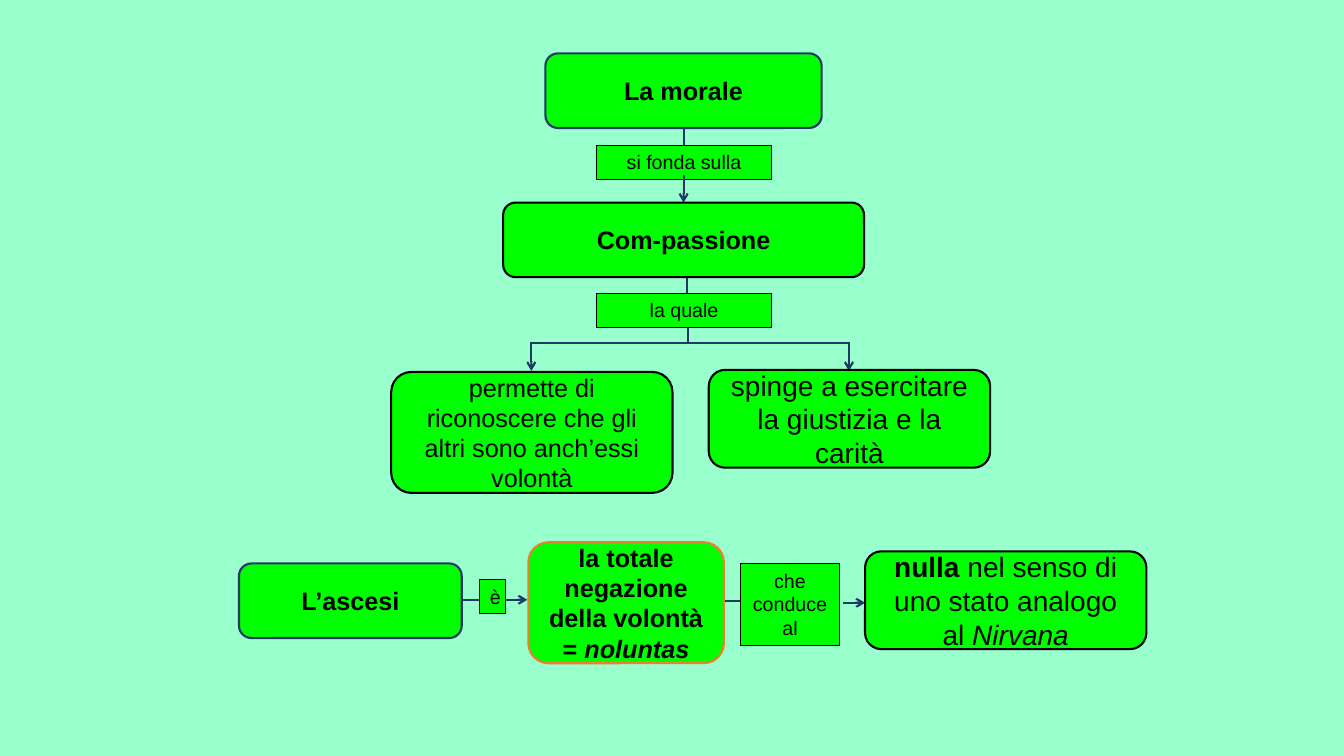
from lxml import etree
from pptx import Presentation
from pptx.dml.color import RGBColor
from pptx.enum import shapes, text
from pptx.oxml.ns import qn
from pptx.util import Inches, Pt

COLORS = {
    "background": "99FFCC",
    "box": "00FF00",
    "black": "000000",
    "navy": "203864",
    "orange": "ED7D31",
}
FONT = "Arial"

# start x, start y, end x, end y
LINES = [
    (5.27, 3.4, 8.42, 3.4),
    (6.82, 3.21, 6.82, 3.4),
    (6.78, 1.26, 6.78, 1.44),
    (6.81, 2.75, 6.81, 2.93),
    (4.59, 5.95, 4.76, 5.95),
    (7.19, 5.96, 7.36, 5.96),
]
ARROWS = [
    (6.78, 1.74, 6.78, 2.01),
    (5.27, 3.39, 5.27, 3.68),
    (8.42, 3.39, 8.42, 3.68),
    (5.02, 5.95, 5.23, 5.95),
    (8.36, 5.98, 8.58, 5.98),
]

# left, top, width, height, wording
LABELS = [
    (5.92, 1.44, 1.73, 0.34, "si fonda sulla"),
    (5.92, 2.91, 1.73, 0.34, "la quale"),
    (4.76, 5.75, 0.25, 0.34, "è"),
    (7.34, 5.59, 0.99, 0.81, "che conduce al"),
]

# left, top, width, height, outline, text size, paragraphs of (wording, style)
CONCEPTS = [
    (5.41, 0.53, 2.74, 0.74, "navy", 18, [[("La morale", "b")]]),
    (4.99, 2.01, 3.58, 0.74, "black", 18, [[("Com-passione", "b")]]),
    (3.88, 3.69, 2.79, 1.2, "black", 18,
     [[("permette di riconoscere che gli altri sono anch’essi volontà", "")]]),
    (7.03, 3.67, 2.79, 0.97, "black", 20,
     [[("spinge a esercitare la giustizia e la carità", "")]]),
    (2.37, 5.59, 2.21, 0.74, "navy", 18, [[("L’ascesi", "b")]]),
    (5.24, 5.38, 1.94, 1.2, "orange", 18,
     [[("la totale negazione", "b")],
      [("della volontà = ", "b"), ("noluntas", "bi")]]),
    (8.58, 5.47, 2.79, 0.97, "black", 20,
     [[("nulla", "b"), (" nel senso di uno stato analogo al ", ""),
       ("Nirvana", "i")]]),
]


def rgb(name):
    return RGBColor.from_string(COLORS[name])


def add_link(slide, ends, arrow=False):
    x1, y1, x2, y2 = map(Inches, ends)
    link = slide.shapes.add_connector(
        shapes.MSO_CONNECTOR.STRAIGHT, x1, y1, x2, y2)
    link.line.color.rgb = rgb("navy")
    link.line.width = Pt(1.5)
    if arrow:
        etree.SubElement(link.line._get_or_add_ln(), qn("a:tailEnd"), type="arrow")
    etree.SubElement(link._element.spPr, qn("a:effectLst"))


def write(tf, paragraphs, size):
    """Fill a text frame; style letters are b for bold and i for italic."""
    tf.word_wrap = True
    for i, runs in enumerate(paragraphs):
        p = tf.paragraphs[0] if i == 0 else tf.add_paragraph()
        p.alignment = text.PP_ALIGN.CENTER
        for wording, style in runs:
            r = p.add_run()
            r.text = wording
            r.font.name = FONT
            r.font.size = Pt(size)
            r.font.bold = "b" in style
            r.font.italic = "i" in style
            r.font.color.rgb = rgb("black")


def paint(sp, outline, width):
    sp.fill.solid()
    sp.fill.fore_color.rgb = rgb("box")
    sp.line.color.rgb = rgb(outline)
    sp.line.width = Pt(width)


def add_label(slide, left, top, width, height, wording):
    sp = slide.shapes.add_textbox(*map(Inches, (left, top, width, height)))
    paint(sp, "black", 0.75)
    write(sp.text_frame, [[(wording, "")]], 14)
    sp.text_frame.auto_size = text.MSO_AUTO_SIZE.SHAPE_TO_FIT_TEXT


def add_concept(slide, left, top, width, height, outline, size, paragraphs):
    sp = slide.shapes.add_shape(
        shapes.MSO_SHAPE.ROUNDED_RECTANGLE,
        *map(Inches, (left, top, width, height)))
    sp.shadow.inherit = False
    paint(sp, outline, 1.5)
    sp.text_frame.vertical_anchor = text.MSO_ANCHOR.MIDDLE
    write(sp.text_frame, paragraphs, size)


def main():
    prs = Presentation()
    prs.slide_width, prs.slide_height = Inches(13.33), Inches(7.5)
    slide = prs.slides.add_slide(prs.slide_layouts[6])
    slide.background.fill.solid()
    slide.background.fill.fore_color.rgb = rgb("background")

    for ends in LINES:
        add_link(slide, ends)
    for label in LABELS:
        add_label(slide, *label)
    for ends in ARROWS:
        add_link(slide, ends, arrow=True)
    for concept in CONCEPTS:
        add_concept(slide, *concept)

    prs.save("out.pptx")


if __name__ == "__main__":
    main()
